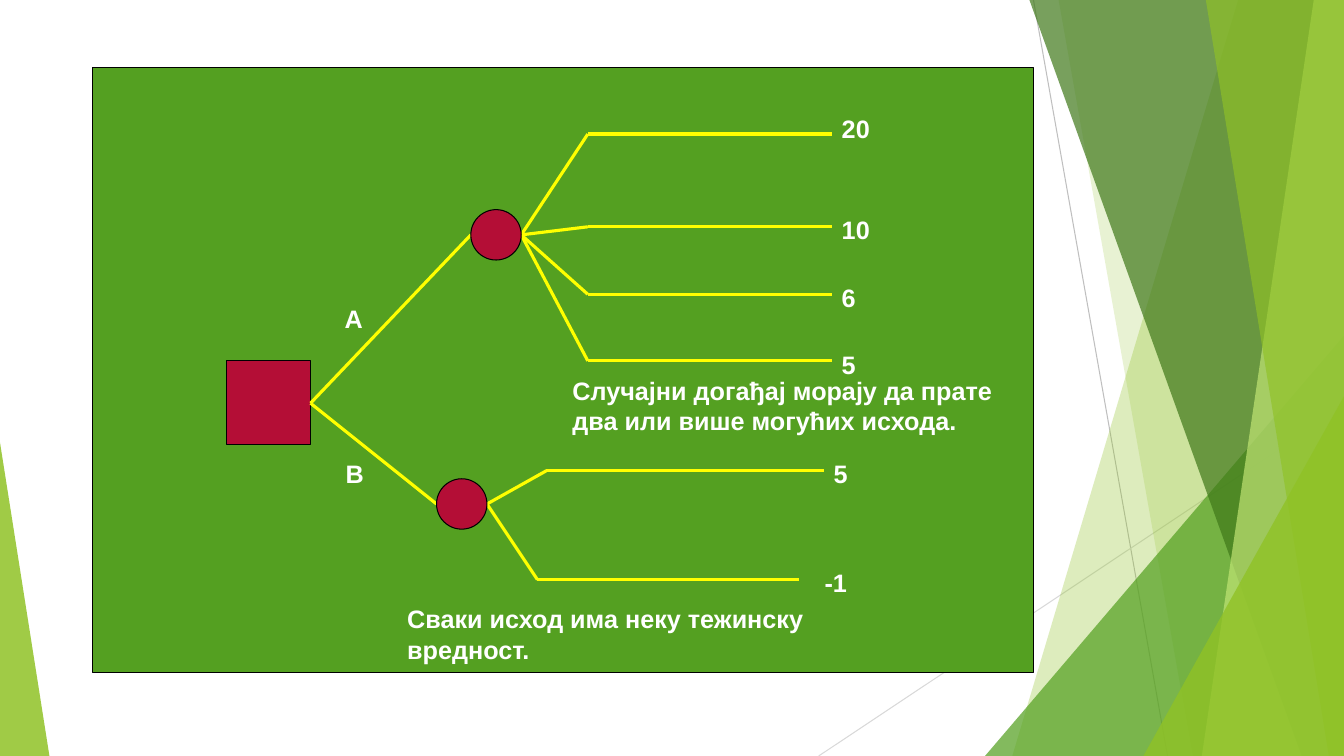
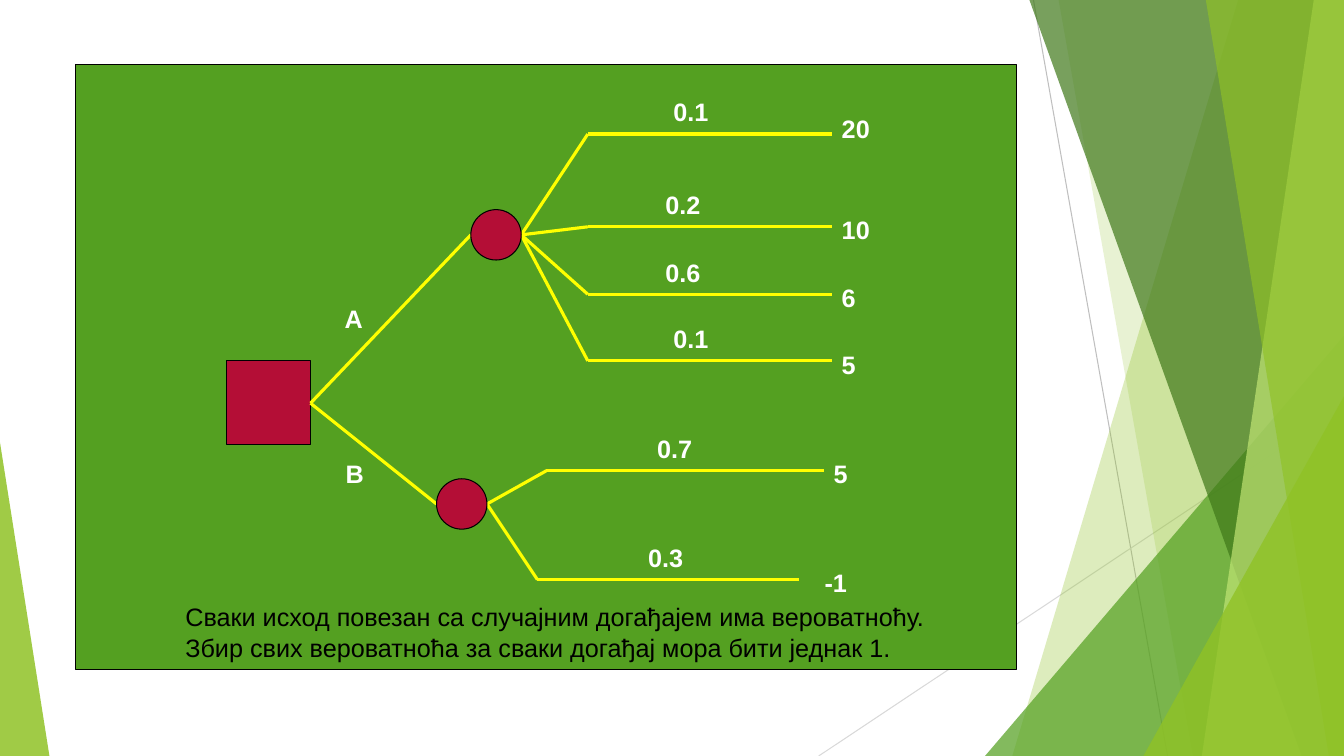
from dataclasses import dataclass

from lxml.etree import SubElement
from pptx import Presentation
from pptx.dml.color import RGBColor
from pptx.enum.shapes import MSO_CONNECTOR, MSO_SHAPE
from pptx.enum.text import MSO_AUTO_SIZE
from pptx.oxml.ns import qn
from pptx.shapes.autoshape import Shape
from pptx.util import Inches, Pt

COLORS = {
    "lime": "90C226",
    "green": "54A021",
    "dark_green": "3F7819",
    "pale_lime": "C0E474",
    "red": "B40E36",
    "yellow": "FFFF00",
    "white": "FFFFFF",
    "black": "000000",
    "gray": "BFBFBF",
    "light_gray": "D9D9D9",
}
FONT = "Arial"
WIDTH, HEIGHT = 13.33, 7.5
LABEL_W, LABEL_H = 0.62, 0.4
NODE_SIZE = 0.5
ROOT_SIZE = 0.83

Point = tuple[float, float]
Box = tuple[float, float, float, float]


@dataclass(frozen=True)
class Band:
    top_left: float
    bottom_left: float
    color: str
    alpha: int


@dataclass(frozen=True)
class Corner:
    box: Box
    apex: int
    color: str
    alpha: int


@dataclass(frozen=True)
class Outcome:
    value: str
    probability: str
    bend: Point
    end_x: float
    value_at: Point
    probability_x: float


@dataclass(frozen=True)
class Option:
    name: str
    name_at: Point
    node: Point
    outcomes: tuple[Outcome, ...]


@dataclass(frozen=True)
class Note:
    text: str
    box: Box
    color: str
    bold: bool


@dataclass(frozen=True)
class TreeSlide:
    panel: Box
    notes: tuple[Note, ...]
    show_probabilities: bool


DECORATION = (
    Band(12.28, 10.04, "lime", 30),
    Band(10.5, 11.83, "lime", 20),
    Corner((9.77, 3.33, 3.56, 4.17), 1, "green", 72),
    Band(10.21, 12.91, "dark_green", 70),
    Band(13.03, 11.92, "pale_lime", 70),
    Band(11.96, 13.18, "lime", 65),
    Corner((11.34, 3.93, 1.99, 3.57), 1, "lime", 80),
    Corner((0, 4.39, 0.49, 3.11), 0, "lime", 85),
)

ROOT = (2.25, 3.58)
OPTIONS = (
    Option("A", (3.32, 2.96), (4.67, 2.08), (
        Outcome("20", "0.1", (5.83, 1.33), 8.25, (8.25, 1.08), 6.58),
        Outcome("10", "0.2", (5.83, 2.25), 8.25, (8.25, 2.08), 6.5),
        Outcome("6", "0.6", (5.83, 2.92), 8.25, (8.25, 2.75), 6.5),
        Outcome("5", "0.1", (5.83, 3.58), 8.25, (8.25, 3.42), 6.58),
    )),
    Option("B", (3.33, 4.5), (4.33, 4.75), (
        Outcome("5", "0.7", (5.42, 4.67), 8.17, (8.17, 4.5), 6.42),
        Outcome("-1", "0.3", (5.33, 5.75), 7.92, (8.08, 5.58), 6.33),
    )),
)

SLIDES = (
    TreeSlide((0.92, 0.67, 9.33, 6), (
        Note("Случајни догађај морају да прате\nдва или више могућих исхода.",
             (5.58, 3.67, 4.43, 0.71), "white", True),
        Note("Сваки исход има неку тежинску вредност.",
             (3.94, 5.94, 4.31, 0.71), "white", True),
    ), False),
    TreeSlide((0.75, 0.64, 9.33, 6), (
        Note("Сваки исход повезан са случајним догађајем има вероватноћу.\v"
             "Збир свих вероватноћа за сваки догађај мора бити једнак 1.",
             (1.74, 5.92, 7.69, 0.71), "black", False),
    ), True),
)


def rgb(name: str) -> RGBColor:
    return RGBColor.from_string(COLORS[name])


def style_translucent(sp: Shape, color: str, alpha: int) -> None:
    sp.shadow.inherit = False
    sp.fill.solid()
    sp.fill.fore_color.rgb = rgb(color)
    sp.line.fill.background()
    clr = sp.element.spPr.find(f"{qn('a:solidFill')}/{qn('a:srgbClr')}")
    SubElement(clr, qn("a:alpha"), val=str(alpha * 1000))


def add_line(shapes, start: Point, end: Point, color: str, width: float) -> None:
    line = shapes.add_connector(MSO_CONNECTOR.STRAIGHT, *map(Inches, start + end))
    line.line.color.rgb = rgb(color)
    line.line.width = Pt(width)
    SubElement(line.element.spPr, qn("a:effectLst"))


def add_branch(shapes, start: Point, end: Point) -> None:
    add_line(shapes, start, end, "yellow", 2.25)


def add_block(shapes, kind: MSO_SHAPE, box: Box, color: str) -> None:
    sp = shapes.add_shape(kind, *map(Inches, box))
    sp.shadow.inherit = False
    sp.fill.solid()
    sp.fill.fore_color.rgb = rgb(color)
    sp.line.color.rgb = rgb("black")
    sp.line.width = Pt(0.75)


def add_text(shapes, note: Note) -> None:
    tf = shapes.add_textbox(*map(Inches, note.box)).text_frame
    tf.word_wrap = True
    tf.auto_size = MSO_AUTO_SIZE.SHAPE_TO_FIT_TEXT
    tf.text = note.text
    for p in tf.paragraphs:
        for r in p.runs:
            r.font.name = FONT
            r.font.size = Pt(18)
            r.font.bold = note.bold
            r.font.color.rgb = rgb(note.color)


def add_label(shapes, text: str, at: Point) -> None:
    add_text(shapes, Note(text, (*at, LABEL_W, LABEL_H), "white", True))


def add_band(shapes, band: Band) -> None:
    builder = shapes.build_freeform(Inches(band.top_left), 0)
    corners = ((WIDTH, 0), (WIDTH, HEIGHT), (band.bottom_left, HEIGHT))
    builder.add_line_segments([(Inches(x), Inches(y)) for x, y in corners])
    style_translucent(builder.convert_to_shape(), band.color, band.alpha)


def add_corner(shapes, corner: Corner) -> None:
    sp = shapes.add_shape(MSO_SHAPE.ISOSCELES_TRIANGLE, *map(Inches, corner.box))
    sp.adjustments[0] = corner.apex
    style_translucent(sp, corner.color, corner.alpha)


def decorate_layout(s, layout) -> None:
    group = s.shapes.add_group_shape()
    add_line(group.shapes, (10.25, 0), (11.58, HEIGHT), "gray", 0.75)
    add_line(group.shapes, (WIDTH, 4.03), (8.12, HEIGHT), "light_gray", 0.75)
    for item in DECORATION:
        if isinstance(item, Band):
            add_band(group.shapes, item)
        else:
            add_corner(group.shapes, item)
    for number, props in enumerate(group.element.iter(qn("p:cNvPr")), 100):
        props.set("id", str(number))
    layout.shapes.element.insert(2, group.element)


def add_option(shapes, option: Option, show_probabilities: bool) -> None:
    left, top = option.node
    middle = top + NODE_SIZE / 2
    add_branch(shapes, (ROOT[0] + ROOT_SIZE, 4), (left, middle))
    add_label(shapes, option.name, option.name_at)
    for outcome in option.outcomes:
        y = outcome.bend[1]
        add_branch(shapes, (left + NODE_SIZE, middle), outcome.bend)
        add_branch(shapes, outcome.bend, (outcome.end_x, y))
        add_label(shapes, outcome.value, outcome.value_at)
        if show_probabilities:
            add_label(shapes, outcome.probability, (outcome.probability_x, y - 0.42))
    add_block(shapes, MSO_SHAPE.OVAL, (left, top, NODE_SIZE, NODE_SIZE), "red")


def add_tree(s, tree: TreeSlide) -> None:
    add_block(s.shapes, MSO_SHAPE.RECTANGLE, tree.panel, "green")
    add_block(s.shapes, MSO_SHAPE.RECTANGLE, (*ROOT, ROOT_SIZE, ROOT_SIZE), "red")
    for option in OPTIONS:
        add_option(s.shapes, option, tree.show_probabilities)
    for note in tree.notes:
        add_text(s.shapes, note)


def main() -> None:
    prs = Presentation()
    prs.slide_width, prs.slide_height = Inches(WIDTH), Inches(HEIGHT)
    layout = prs.slide_layouts[6]
    slides = [prs.slides.add_slide(layout) for _ in SLIDES]
    decorate_layout(slides[0], layout)
    for s, tree in zip(slides, SLIDES):
        add_tree(s, tree)
    prs.save("out.pptx")


if __name__ == "__main__":
    main()
